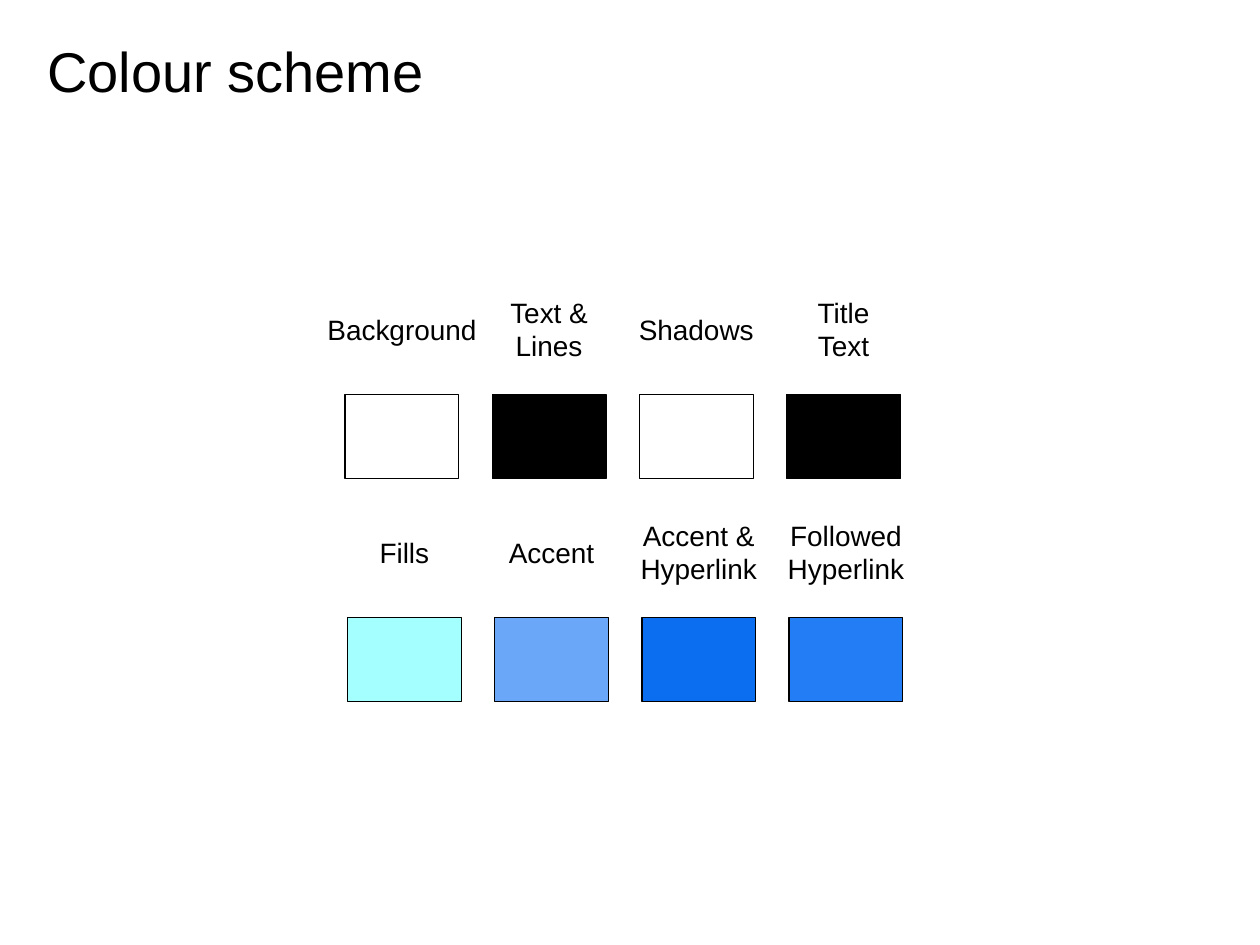
"""Build a slide that shows the eight colours of a colour scheme."""
from pptx import Presentation
from pptx.dml.color import RGBColor
from pptx.enum import shapes, text
from pptx.util import Pt

BLACK = RGBColor(0x00, 0x00, 0x00)
WHITE = RGBColor(0xFF, 0xFF, 0xFF)
AQUA = RGBColor(0xA4, 0xFF, 0xFF)
SKY = RGBColor(0x6B, 0xA7, 0xF8)
BLUE = RGBColor(0x0B, 0x6D, 0xEF)
AZURE = RGBColor(0x23, 0x7D, 0xF5)

FONT = "Arial"
WIDE, HIGH = 65, 48.2
PITCH = 84.1
RISE = 37.1

ROWS = [
    (197.2, 225.4, [("Background", 101, WHITE), ("Text &\nLines", 61, BLACK),
                    ("Shadows", 81, WHITE), ("Title\vText", 46, BLACK)]),
    (198.6, 352.8, [("Fills", 44, AQUA), ("Accent", 64, SKY),
                    ("Accent &\nHyperlink", 82, BLUE),
                    ("Followed\nHyperlink", 82, AZURE)]),
]


def style(frame, size, align):
    for par in frame.paragraphs:
        par.alignment = align
        par.font.name = FONT
        par.font.size = Pt(size)
        par.font.color.rgb = BLACK


def add_title(slide, words):
    box = slide.shapes.add_textbox(Pt(19.8), Pt(3.6), Pt(538.6), Pt(72.7))
    frame = box.text_frame
    frame.word_wrap = True
    frame.vertical_anchor = text.MSO_ANCHOR.MIDDLE
    frame.text = words
    style(frame, 32, text.PP_ALIGN.LEFT)


def add_label(slide, words, mid, level, width):
    high = 26.6 if words.isprintable() else 46.1
    box = slide.shapes.add_textbox(
        Pt(mid - width / 2), Pt(level - high / 2), Pt(width), Pt(high))
    frame = box.text_frame
    frame.word_wrap = False
    frame.auto_size = text.MSO_AUTO_SIZE.SHAPE_TO_FIT_TEXT
    frame.text = words
    style(frame, 16, text.PP_ALIGN.CENTER)


def add_swatch(slide, left, top, color):
    box = slide.shapes.add_shape(
        shapes.MSO_SHAPE.RECTANGLE, Pt(left), Pt(top), Pt(WIDE), Pt(HIGH))
    box.shadow.inherit = False
    box.fill.solid()
    box.fill.fore_color.rgb = color
    box.line.color.rgb = BLACK
    box.line.width = Pt(0.75)


def main():
    deck = Presentation()
    deck.slide_width, deck.slide_height = Pt(720), Pt(540)
    slide = deck.slides.add_slide(deck.slide_layouts[6])
    add_title(slide, "Colour scheme")
    for start, top, items in ROWS:
        for col, (words, width, color) in enumerate(items):
            left = start + col * PITCH
            add_swatch(slide, left, top, color)
            add_label(slide, words, left + WIDE / 2, top - RISE, width)
    deck.save("out.pptx")


if __name__ == "__main__":
    main()
